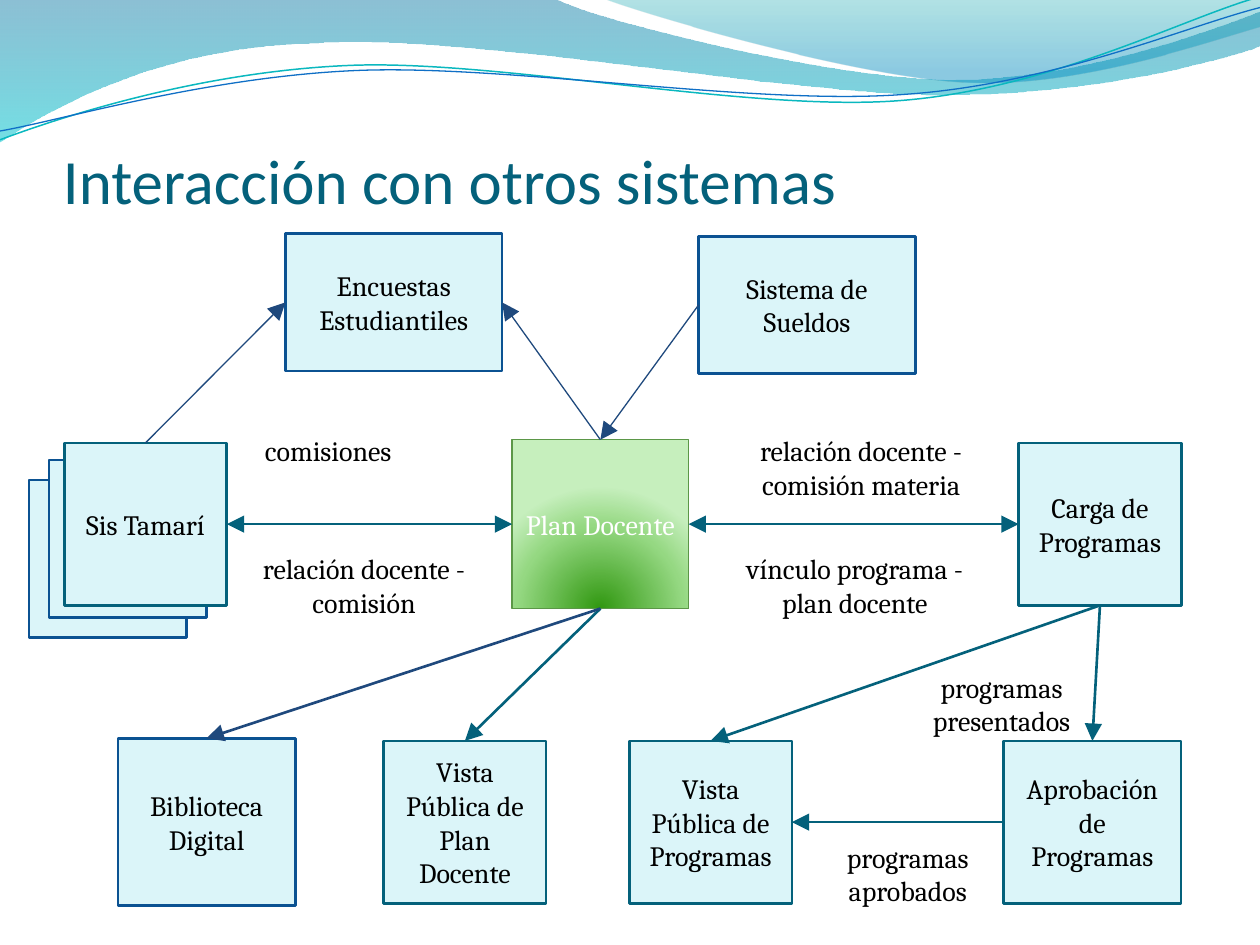
"""Build a slide that maps how the teaching plan interacts with other systems."""
from lxml import etree
from pptx import Presentation
from pptx.dml.color import RGBColor
from pptx.enum.shapes import MSO_CONNECTOR, MSO_SHAPE
from pptx.enum.text import MSO_ANCHOR, PP_ALIGN
from pptx.oxml import parse_xml
from pptx.oxml.ns import qn
from pptx.util import Inches, Pt

RECT = MSO_SHAPE.RECTANGLE
LINE = MSO_CONNECTOR.STRAIGHT
TOP, MIDDLE, BOTTOM = MSO_ANCHOR.TOP, MSO_ANCHOR.MIDDLE, MSO_ANCHOR.BOTTOM
LEFT, CENTER = PP_ALIGN.LEFT, PP_ALIGN.CENTER
TEAL = RGBColor(0x04, 0x61, 0x7B)
BLUE = RGBColor(0x0B, 0x52, 0x92)
NAVY = RGBColor(0x1F, 0x49, 0x7D)
PALE = RGBColor(0xDB, 0xF5, 0xF9)
GREEN = RGBColor(0x5B, 0x97, 0x47)
AQUA = RGBColor(0x0A, 0xB8, 0xBF)
SKY = RGBColor(0x0F, 0x6F, 0xC6)
BLACK = RGBColor(0, 0, 0)
WHITE = RGBColor(0xFF, 0xFF, 0xFF)
NS = 'xmlns:a="http://schemas.openxmlformats.org/drawingml/2006/main"'

deck = Presentation()
deck.slide_width, deck.slide_height = Inches(10), Inches(7.5)
COL, ROW = deck.slide_width / 1000, deck.slide_height / 750
shapes = deck.slides.add_slide(deck.slide_layouts[6]).shapes


def write(shape, text, anchor, align, color, size, font, pads):
    frame = shape.text_frame
    frame.word_wrap = True
    frame.vertical_anchor = anchor
    frame.margin_left, frame.margin_top, frame.margin_right, frame.margin_bottom = (
        round(pad * COL) for pad in pads)
    para = frame.paragraphs[0]
    para.alignment = align
    run = para.add_run()
    run.text = text
    run.font.size, run.font.name = Pt(size), font
    run.font.color.rgb = color


def blend(shape, stops, shade):
    marks = "".join(
        f'<a:gs pos="{pos * 1000}"><a:srgbClr val="{tint}">'
        f'<a:alpha val="{alpha * 1000}"/></a:srgbClr></a:gs>'
        for pos, tint, alpha in stops)
    shape.fill.solid()
    props = shape._element.spPr
    props.replace(props.find(qn("a:solidFill")), parse_xml(
        f'<a:gradFill {NS} rotWithShape="1"><a:gsLst>{marks}</a:gsLst>{shade}</a:gradFill>'))


DOWN = '<a:lin ang="5400000" scaled="0"/>'
waves = [
    ([(0, 0), (440, -1), (476, 17, 664, 63, 758, 63), (853, 63, 958, 26, 1000, 9),
      (1001, 36), (983, 44, 870, 76, 746, 75), (622, 75, 382, 28, 257, 34),
      (129, 36, 46, 83, -1, 113)], [(0, "0074A1", 45), (100, "00C6CF", 55)], None, 0),
    ([(479, -1), (509, 11, 682, 62, 769, 65), (856, 69, 961, 32, 1000, 21),
      (1000, 0)], [(0, "00A1A9", 30), (80, "008BBF", 45)], None, 0),
    ([(0, 111), (48, 93, 158, 57, 277, 52), (395, 47, 593, 89, 713, 80),
      (833, 71, 938, 15, 998, -2)], None, AQUA, 0.85),
    ([(0, 104), (47, 96, 164, 61, 283, 56), (403, 51, 597, 84, 717, 75),
      (836, 67, 941, 21, 1000, 6)], None, SKY, 0.75),
]
for parts, stops, color, width in waves:
    dots = [(part[i] * COL, part[i + 1] * ROW)
            for part in parts for i in range(0, len(part), 2)]
    pen = shapes.build_freeform(*dots[0], scale=1.0)
    pen.add_line_segments(dots[1:], close=stops is not None)
    wave = pen.convert_to_shape()
    wave.shadow.inherit = False
    legs = iter(list(wave._element.iter(qn("a:lnTo"))))
    for part in parts[1:]:
        leg = next(legs)
        if len(part) == 6:
            leg.tag = qn("a:cubicBezTo")
            for more in (next(legs), next(legs)):
                leg.append(more[0])
                more.getparent().remove(more)
    if stops:
        blend(wave, stops, DOWN)
        wave.line.fill.background()
    else:
        wave.fill.background()
        wave.line.color.rgb, wave.line.width = color, Pt(width)

boxes = [
    ("back", "", 23, 381, 125, 125, BLUE),
    ("mid", "", 39, 365, 125, 125, BLUE),
    ("siu", "Sis Tamarí", 51, 351.5, 129, 129, TEAL),
    ("plan", "Plan Docente", 406.5, 349, 140, 134, GREEN),
    ("load", "Carga de Programas", 808.5, 351.5, 129, 129, TEAL),
    ("view", "Vista Pública de Programas", 499.5, 588, 129, 129, TEAL),
    ("pass", "Aprobación de Programas", 796.5, 588, 141, 129, TEAL),
    ("show", "Vista Pública de Plan Docente", 304.5, 588, 129, 129, TEAL),
    ("books", "Biblioteca Digital", 93.5, 586, 141, 133, BLUE),
    ("polls", "Encuestas Estudiantiles", 226.5, 185.5, 172, 109, BLUE),
    ("pay", "Sistema de Sueldos", 554.5, 187.5, 172, 109, BLUE),
]
nodes = {}
for name, text, x, y, w, h, edge in boxes:
    box = shapes.add_shape(RECT, round(x * COL), round(y * ROW),
                           round(w * COL), round(h * ROW))
    box.shadow.inherit = False
    box.fill.solid()
    box.fill.fore_color.rgb = PALE
    box.line.color.rgb = edge
    box.line.width = Pt(0.75 if name == "plan" else 1.5)
    if text:
        ink = WHITE if name == "plan" else BLACK
        write(box, text, MIDDLE, CENTER, ink, 16, "Cambria", (10, 10, 10, 10))
    nodes[name] = box

blend(nodes["plan"], [(0, "319811", 100), (68, "95D882", 100), (100, "C6EFBD", 100)],
      '<a:path path="circle"><a:fillToRect l="50000" t="130000" r="50000" b="-30000"/></a:path>')

links = [
    ("siu", 3, "plan", 1, TEAL, 1.5, True),
    ("plan", 3, "load", 1, TEAL, 1.5, True),
    ("load", 2, "pass", 0, TEAL, 1.5, False),
    ("load", 2, "view", 0, TEAL, 1.5, False),
    ("pass", 1, "view", 3, TEAL, 1.5, False),
    ("plan", 2, "show", 0, TEAL, 1.5, False),
    ("plan", 2, "books", 0, NAVY, 1.5, False),
    ("plan", 0, "polls", 3, NAVY, 0.75, False),
    ("siu", 0, "polls", 1, NAVY, 0.75, False),
    ("pay", 1, "plan", 0, NAVY, 0.75, False),
]
for start, out, end, into, color, width, both in links:
    link = shapes.add_connector(LINE, 0, 0, 0, 0)
    link.begin_connect(nodes[start], out)
    link.end_connect(nodes[end], into)
    link.line.color.rgb, link.line.width = color, Pt(width)
    edge = link.line._get_or_add_ln()
    for tag in ("a:headEnd", "a:tailEnd") if both else ("a:tailEnd",):
        etree.SubElement(edge, qn(tag), type="triangle", w="lg", len="lg")
    etree.SubElement(link._element.spPr, qn("a:effectLst"))

NOTE = (TOP, CENTER, BLACK, 16, "Cambria", (10, 10, 10, 10))
HEAD = (BOTTOM, LEFT, TEAL, 36, "Calibri", (0, 5, 0, 0))
labels = [
    ("Interacción con otros sistemas", 50, 77, 900, 95, HEAD),
    ("comisiones", 187, 334, 147, 52, NOTE),
    ("relación docente - comisión", 172, 428, 234, 55, NOTE),
    ("relación docente - comisión materia", 563, 334, 241, 52, NOTE),
    ("vínculo programa - plan docente", 578, 428, 201, 52, NOTE),
    ("programas presentados", 680, 522, 230, 47, NOTE),
    ("programas aprobados", 635, 657, 171, 52, NOTE),
]
for text, x, y, w, h, style in labels:
    label = shapes.add_textbox(round(x * COL), round(y * ROW),
                               round(w * COL), round(h * ROW))
    write(label, text, *style)

deck.save("out.pptx")
